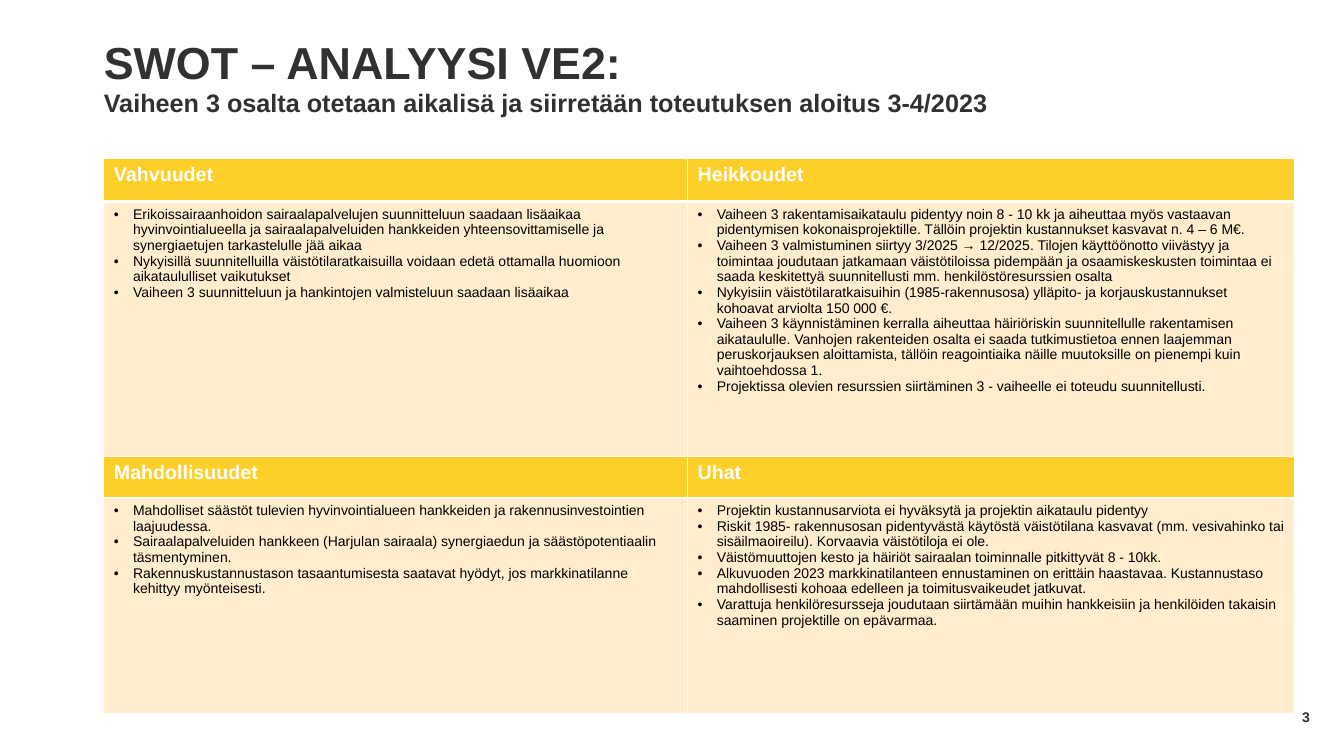
"""Build a SWOT analysis slide with a title and a two-by-two table."""
from dataclasses import dataclass

from lxml import etree
from pptx import Presentation
from pptx import util as u
from pptx.dml import color
from pptx.enum import text
from pptx.oxml import ns

DARK, WHITE, BLACK = "313131", "FFFFFF", "000000"
GOLD, CREAM = "FFCF29", "FFEDCD"
BULLET_INDENT = u.Inches(0.19)
COLUMN_WIDTHS = (5.79, 6.02)
ROW_HEIGHTS = (0.43, 2.53, 0.41, 2.14)


@dataclass(frozen=True)
class Style:
    size: int
    hex_color: str
    bold: bool = True


@dataclass(frozen=True)
class Quadrant:
    heading: str
    points: tuple[str, ...]


HEADING_STYLE = Style(14, WHITE)
POINT_STYLE = Style(10, BLACK, False)

QUADRANTS = (
    Quadrant("Vahvuudet", (
        "Erikoissairaanhoidon sairaalapalvelujen suunnitteluun saadaan lisäaikaa "
        "hyvinvointialueella ja sairaalapalveluiden hankkeiden yhteensovittamiselle ja "
        "synergiaetujen tarkastelulle jää aikaa",
        "Nykyisillä suunnitelluilla väistötilaratkaisuilla voidaan edetä ottamalla huomioon "
        "aikataululliset vaikutukset",
        "Vaiheen 3 suunnitteluun ja hankintojen valmisteluun saadaan lisäaikaa",
    )),
    Quadrant("Heikkoudet", (
        "Vaiheen 3 rakentamisaikataulu pidentyy noin 8 - 10 kk ja aiheuttaa myös vastaavan "
        "pidentymisen kokonaisprojektille. Tällöin projektin kustannukset kasvavat n. 4 – 6 M€.",
        "Vaiheen 3 valmistuminen siirtyy 3/2025 → 12/2025. Tilojen käyttöönotto viivästyy ja "
        "toimintaa joudutaan jatkamaan väistötiloissa pidempään ja osaamiskeskusten toimintaa ei "
        "saada keskitettyä suunnitellusti mm. henkilöstöresurssien osalta",
        "Nykyisiin väistötilaratkaisuihin (1985-rakennusosa) ylläpito- ja korjauskustannukset "
        "kohoavat arviolta 150 000 €.",
        "Vaiheen 3 käynnistäminen kerralla aiheuttaa häiriöriskin suunnitellulle rakentamisen "
        "aikataululle. Vanhojen rakenteiden osalta ei saada tutkimustietoa ennen laajemman "
        "peruskorjauksen aloittamista, tällöin reagointiaika näille muutoksille on pienempi kuin "
        "vaihtoehdossa 1.",
        "Projektissa olevien resurssien siirtäminen 3 - vaiheelle ei toteudu suunnitellusti.",
    )),
    Quadrant("Mahdollisuudet", (
        "Mahdolliset säästöt tulevien hyvinvointialueen hankkeiden ja rakennusinvestointien "
        "laajuudessa.",
        "Sairaalapalveluiden hankkeen (Harjulan sairaala) synergiaedun ja säästöpotentiaalin "
        "täsmentyminen.",
        "Rakennuskustannustason tasaantumisesta saatavat hyödyt, jos markkinatilanne "
        "kehittyy myönteisesti.",
    )),
    Quadrant("Uhat", (
        "Projektin kustannusarviota ei hyväksytä ja projektin aikataulu pidentyy",
        "Riskit 1985- rakennusosan pidentyvästä käytöstä väistötilana kasvavat (mm. vesivahinko "
        "tai sisäilmaoireilu). Korvaavia väistötiloja ei ole.",
        "Väistömuuttojen kesto ja häiriöt sairaalan toiminnalle pitkittyvät 8 - 10kk.",
        "Alkuvuoden 2023 markkinatilanteen ennustaminen on erittäin haastavaa. Kustannustaso "
        "mahdollisesti kohoaa edelleen ja toimitusvaikeudet jatkuvat.",
        "Varattuja henkilöresursseja joudutaan siirtämään muihin hankkeisiin ja henkilöiden "
        "takaisin saaminen projektille on epävarmaa.",
    )),
)


def paint(target, hex_color: str) -> None:
    """Give a font colour or a fill colour its hex value."""
    target.rgb = color.RGBColor.from_string(hex_color)


def apply(target, values: dict) -> None:
    """Set every attribute in a dict of format values."""
    for name, value in values.items():
        setattr(target, name, value)


def write(paragraph, words: str, style: Style) -> None:
    """Add one styled run to a paragraph."""
    run = paragraph.add_run()
    run.text = words
    apply(run.font, {"name": "Arial", "size": u.Pt(style.size), "bold": style.bold})
    paint(run.font.color, style.hex_color)


def paragraph_at(frame, index: int):
    """Return the first paragraph of a frame or append a new one."""
    return frame.paragraphs[0] if index == 0 else frame.add_paragraph()


def add_label(slide, box: tuple[float, ...], lines: list[tuple[str, Style]],
              frame_format: dict, paragraph_format: dict) -> None:
    """Add a wrapped text box without margins."""
    frame = slide.shapes.add_textbox(*map(u.Inches, box)).text_frame
    margins = dict.fromkeys(("margin_left", "margin_top", "margin_right", "margin_bottom"), 0)
    apply(frame, {"word_wrap": True, **margins, **frame_format})
    for index, (words, style) in enumerate(lines):
        paragraph = paragraph_at(frame, index)
        apply(paragraph, paragraph_format)
        write(paragraph, words, style)


def add_bullet(paragraph) -> None:
    """Give a paragraph a hanging round bullet."""
    properties = paragraph._p.get_or_add_pPr()
    properties.set("marL", str(BULLET_INDENT))
    properties.set("indent", str(-BULLET_INDENT))
    etree.SubElement(properties, ns.qn("a:buFont"), typeface="Arial")
    etree.SubElement(properties, ns.qn("a:buChar"), char="•")


def add_borders(cell, row: int) -> None:
    """Draw white cell borders, thicker under the first heading row."""
    thick_side = {0: "B", 1: "T"}.get(row)
    properties = cell._tc.get_or_add_tcPr()
    for side in "LRTB":
        width = u.Pt(3 if side == thick_side else 1)
        line = etree.SubElement(properties, ns.qn(f"a:ln{side}"), w=str(width))
        fill = etree.SubElement(line, ns.qn("a:solidFill"))
        etree.SubElement(fill, ns.qn("a:srgbClr"), val=WHITE)


def fill_cell(table, row: int, column: int, words: tuple[str, ...], is_heading: bool) -> None:
    """Format one table cell and write its heading or bullet points."""
    cell = table.cell(row, column)
    add_borders(cell, row)
    cell.fill.solid()
    paint(cell.fill.fore_color, GOLD if is_heading else CREAM)
    for index, line in enumerate(words):
        paragraph = paragraph_at(cell.text_frame, index)
        if not is_heading:
            add_bullet(paragraph)
        write(paragraph, line, HEADING_STYLE if is_heading else POINT_STYLE)


def add_swot_table(slide) -> None:
    """Add the table with a heading row above each row of points."""
    table = slide.shapes.add_table(
        len(ROW_HEIGHTS), len(COLUMN_WIDTHS), u.Inches(1.03), u.Inches(1.57),
        u.Inches(sum(COLUMN_WIDTHS)), u.Inches(sum(ROW_HEIGHTS))).table
    for column, width in zip(table.columns, COLUMN_WIDTHS):
        column.width = u.Inches(width)
    for row, height in zip(table.rows, ROW_HEIGHTS):
        row.height = u.Inches(height)
    for index, quadrant in enumerate(QUADRANTS):
        band, column = divmod(index, len(COLUMN_WIDTHS))
        fill_cell(table, 2 * band, column, (quadrant.heading,), True)
        fill_cell(table, 2 * band + 1, column, quadrant.points, False)


def main() -> None:
    """Create and save the presentation."""
    deck = Presentation()
    apply(deck, {"slide_width": u.Inches(13.33), "slide_height": u.Inches(7.5)})
    slide = deck.slides.add_slide(deck.slide_layouts[6])
    title_lines = [
        ("SWOT – ANALYYSI VE2:", Style(32, DARK)),
        ("Vaiheen 3 osalta otetaan aikalisä ja siirretään toteutuksen aloitus 3-4/2023",
         Style(18, DARK)),
    ]
    add_label(slide, (1.03, 0.38, 11.28, 1.05), title_lines, {}, {"line_spacing": 0.95})
    add_label(slide, (9.99, 6.91, 3, 0.4), [("3", Style(10, DARK))],
              {"vertical_anchor": text.MSO_ANCHOR.MIDDLE},
              {"alignment": text.PP_ALIGN.RIGHT})
    add_swot_table(slide)
    deck.save("out.pptx")


if __name__ == "__main__":
    main()
